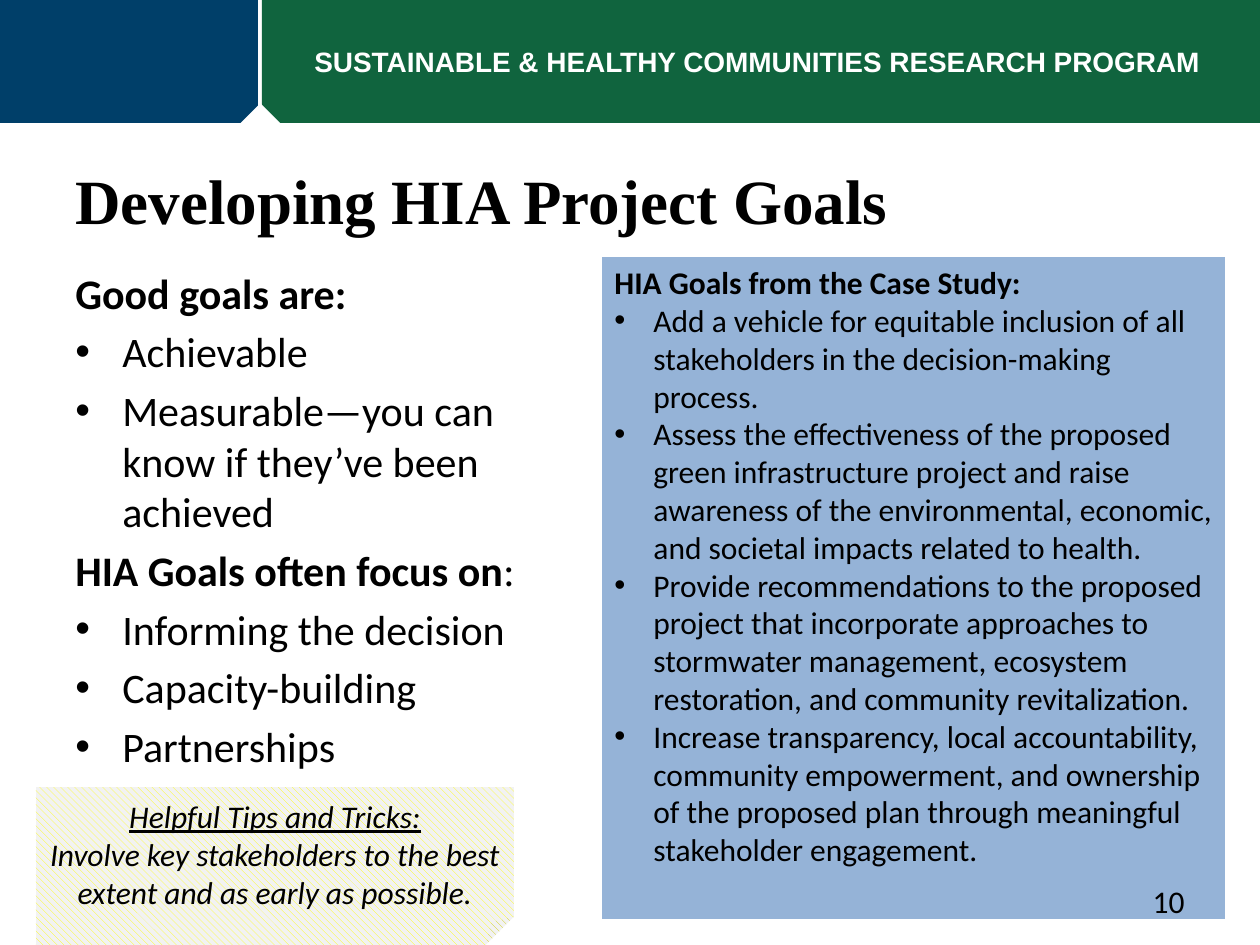
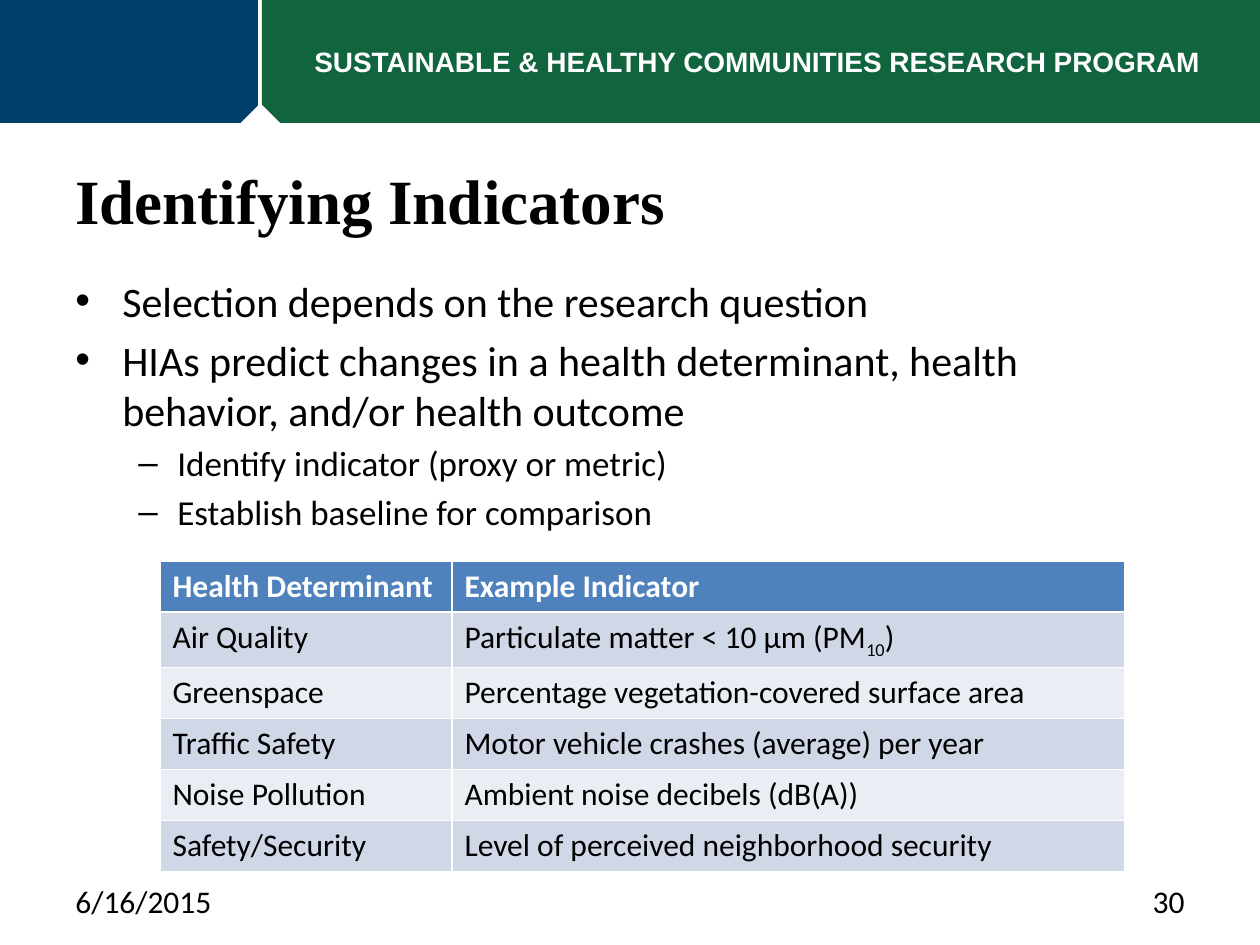
from pptx import Presentation, util as u
from pptx.dml.color import RGBColor
from pptx.enum import dml, shapes, text
from pptx.oxml.ns import qn
from lxml import etree

SCALE = 914400 / 126
NAVY, GREEN, WHITE, BLACK = "003F69", "10643E", "FFFFFF", "000000"
PANEL_BLUE, TIP_YELLOW, TIP_GRAY = "95B3D7", "FFFF00", "F2F2F2"
HEADER_BLUE, BANDS = "4F81BD", ("D0D8E8", "E9EDF4")
BODY_FONT, TITLE_FONT, BAND_FONT = "Calibri", "Times New Roman", "Arial"
LEFT, RIGHT = text.PP_ALIGN.LEFT, text.PP_ALIGN.RIGHT
CENTER = text.PP_ALIGN.CENTER
TOP, BOTTOM = text.MSO_ANCHOR.TOP, text.MSO_ANCHOR.BOTTOM


def px(length):
    """Turn pixels into EMU."""
    return u.Emu(round(length * SCALE))


def color(value):
    """Turn a hex string into a colour."""
    return RGBColor.from_string(value)


def set_bullet(para, mark, margin, hang):
    """Give a paragraph a bullet and a hanging indent."""
    props = para._p.get_or_add_pPr()
    props.set("marL", str(px(margin)))
    props.set("indent", str(-px(hang)))
    etree.SubElement(props, qn("a:buFont")).set("typeface", "Arial")
    etree.SubElement(props, qn("a:buChar")).set("char", mark)


def add_para(frame, content, size=18, font=BODY_FONT, ink=BLACK, bold=False,
             italic=False, underline=False, align=LEFT, bullet=None, gap=0):
    """Add a paragraph from a string or from (text, overrides) spans."""
    first = len(frame.paragraphs) == 1 and not frame.paragraphs[0].runs
    para = frame.paragraphs[0] if first else frame.add_paragraph()
    if bullet:
        set_bullet(para, *bullet)
    para.alignment = align
    para.space_before = u.Pt(0 if first else gap)
    spans = [(content, {})] if isinstance(content, str) else content
    for words, changes in spans:
        span = para.add_run()
        span.text = words
        span.font.size, span.font.name = u.Pt(size), font
        span.font.color.rgb = color(ink)
        span.font.bold = changes.get("bold", bold)
        span.font.italic, span.font.underline = italic, underline
        if "baseline" in changes:
            span._r.get_or_add_rPr().set("baseline", str(changes["baseline"]))


def add_box(page, place, anchor=TOP, wrap=True):
    """Add an empty text box and return its text frame."""
    frame = page.shapes.add_textbox(*map(px, place)).text_frame
    frame.word_wrap, frame.vertical_anchor = wrap, anchor
    return frame


def add_block(page, place, fill, kind=shapes.MSO_SHAPE.RECTANGLE):
    """Add a filled shape without outline or shadow."""
    block = page.shapes.add_shape(kind, *map(px, place))
    block.shadow.inherit = False
    block.line.fill.background()
    block.fill.solid()
    block.fill.fore_color.rgb = color(fill)
    block.text_frame.word_wrap = True
    block.text_frame.vertical_anchor = TOP
    return block


def add_page(deck, title):
    """Add a page with the program band and its title."""
    page = deck.slides.add_slide(deck.slide_layouts[6])
    add_block(page, (0, 0, 258, 123), NAVY)
    add_block(page, (262, 0, 998, 123), GREEN)
    add_para(add_box(page, (302, 38, 926, 47), wrap=False),
             "SUSTAINABLE & HEALTHY COMMUNITIES RESEARCH PROGRAM",
             size=16, font=BAND_FONT, ink=WHITE, bold=True)
    add_block(page, (244, 110, 33, 33), WHITE).rotation = 315
    add_para(add_box(page, (63, 151, 1134, 92), BOTTOM), title,
             size=36, font=TITLE_FONT, bold=True)
    return page


def add_footer(page, words, left, align):
    """Add a footer entry."""
    add_para(add_box(page, (left, 876, 294, 50)), words, align=align)


def add_goals(page):
    """Add the list of what good goals are and focus on."""
    frame = add_box(page, (63, 261, 494, 384))
    sections = (
        ([("Good goals are:", {})],
         ("Achievable", "Measurable—you can know if they’ve been achieved")),
        ([("HIA Goals often focus on", {}), (":", {"bold": False})],
         ("Informing the decision", "Capacity-building", "Partnerships")),
    )
    for heading, points in sections:
        add_para(frame, heading, size=24, bold=True, gap=4.8)
        for point in points:
            add_para(frame, point, size=24, bullet=("•", 47, 47), gap=4.8)


def add_case_study(page):
    """Add the panel with the goals of the case study."""
    frame = add_block(page, (602, 257, 623, 662), PANEL_BLUE).text_frame
    add_para(frame, "HIA Goals from the Case Study:", bold=True)
    for goal in (
        "Add a vehicle for equitable inclusion of all stakeholders in the "
        "decision-making process.",
        "Assess the effectiveness of the proposed green infrastructure "
        "project and raise awareness of the environmental, economic, and "
        "societal impacts related to health.",
        "Provide recommendations to the proposed project that incorporate "
        "approaches to stormwater management, ecosystem restoration, and "
        "community revitalization.",
        "Increase transparency, local accountability, community empowerment, "
        "and ownership of the proposed plan through meaningful stakeholder "
        "engagement.",
    ):
        add_para(frame, goal, bullet=("•", 39, 39))


def set_fold(note, share):
    """Set the size of a folded corner as a share of the short side."""
    geometry = note._element.spPr.find(qn("a:prstGeom"))
    guide = etree.SubElement(geometry.get_or_add_avLst(), qn("a:gd"))
    guide.set("name", "adj")
    guide.set("fmla", f"val {round(share * 100000)}")


def add_tip(page):
    """Add the hatched note with a folded corner."""
    note = add_block(page, (36, 787, 478, 158), TIP_GRAY,
                     shapes.MSO_SHAPE.FOLDED_CORNER)
    set_fold(note, 0.18)
    note.fill.patterned()
    note.fill.pattern = dml.MSO_PATTERN.WIDE_DOWNWARD_DIAGONAL
    note.fill.fore_color.rgb = color(TIP_YELLOW)
    note.fill.back_color.rgb = color(TIP_GRAY)
    frame = note.text_frame
    frame.vertical_anchor = BOTTOM
    add_para(frame, "Helpful Tips and Tricks:", italic=True, underline=True,
             align=CENTER)
    add_para(frame, "Involve key stakeholders to the best extent and as early "
             "as possible.", italic=True, align=CENTER)


def add_selection(page):
    """Add the points on how indicators are selected."""
    frame = add_box(page, (63, 269, 1134, 282))
    for point in (
        "Selection depends on the research question",
        "HIAs predict changes in a health determinant, health behavior, "
        "and/or health outcome",
    ):
        add_para(frame, point, size=24, bullet=("•", 47, 47), gap=4.8)
    for step in ("Identify indicator (proxy or metric)",
                 "Establish baseline for comparison"):
        add_para(frame, step, size=20, bullet=("–", 102, 39), gap=4)


def add_indicators(page):
    """Add the table of determinants and indicators."""
    rows = (
        ("Health Determinant", "Example Indicator"),
        ("Air Quality", [("Particulate matter < 10 μm (PM", {}),
                         ("10", {"baseline": -25000}), (")", {})]),
        ("Greenspace", "Percentage vegetation-covered surface area"),
        ("Traffic Safety", "Motor vehicle crashes (average) per year"),
        ("Noise Pollution", "Ambient noise decibels (dB(A))"),
        ("Safety/Security", "Level of perceived neighborhood security"),
    )
    place = (160, 561, 965, 51 * len(rows))
    table = page.shapes.add_table(len(rows), 2, *map(px, place)).table
    for column, width in zip(table.columns, (292, 673)):
        column.width = px(width)
    for index, row in enumerate(rows):
        header = index == 0
        for cell, content in zip(table.rows[index].cells, row):
            cell.fill.solid()
            cell.fill.fore_color.rgb = color(
                HEADER_BLUE if header else BANDS[(index - 1) % 2])
            add_para(cell.text_frame, content, bold=header,
                     ink=WHITE if header else BLACK)


def main():
    """Build and save the deck."""
    deck = Presentation()
    deck.slide_width, deck.slide_height = px(1260), px(945)

    page = add_page(deck, "Developing HIA Project Goals")
    add_goals(page)
    add_case_study(page)
    add_tip(page)
    add_footer(page, "10", 903, RIGHT)

    page = add_page(deck, "Identifying Indicators")
    add_selection(page)
    add_indicators(page)
    add_footer(page, "6/16/2015", 63, LEFT)
    add_footer(page, "30", 903, RIGHT)

    deck.save("out.pptx")


if __name__ == "__main__":
    main()
